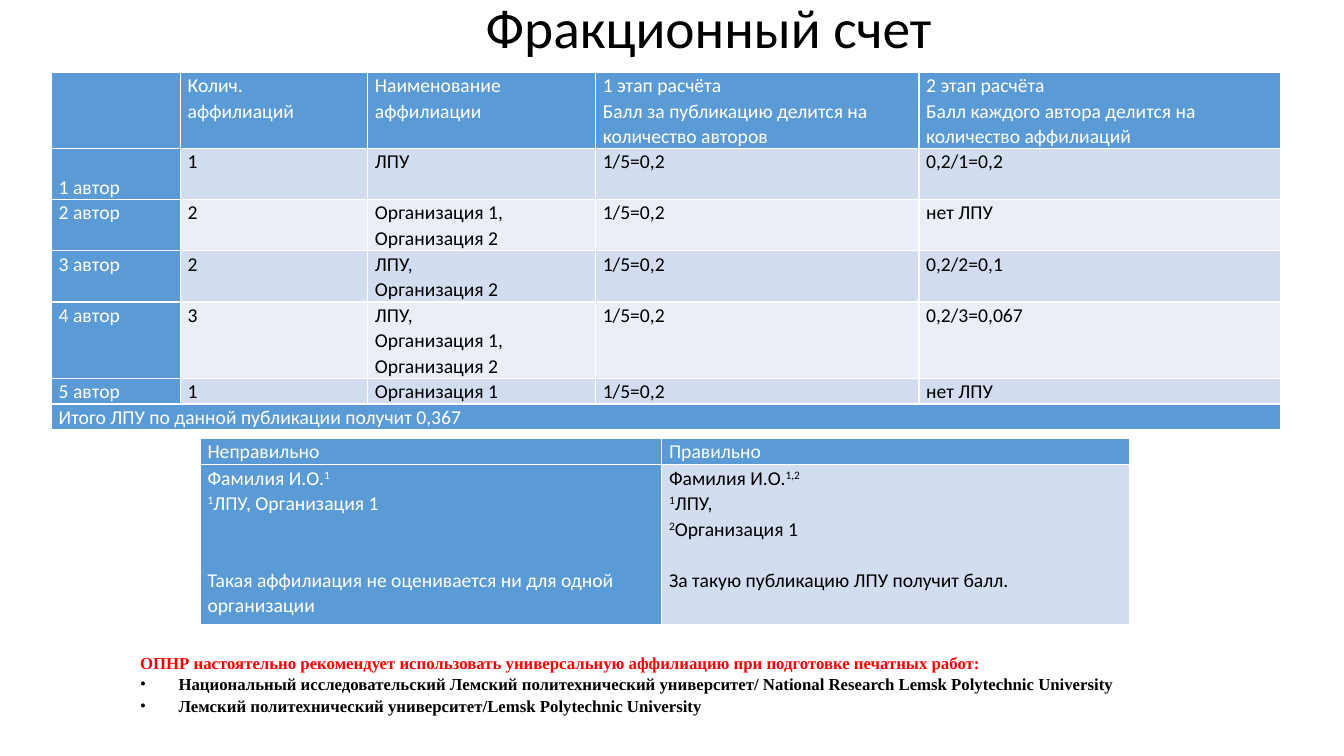
"""Build the slide on fractional counting of affiliations."""
from lxml import etree
from pptx import Presentation
from pptx.dml.color import RGBColor
from pptx.enum.text import MSO_ANCHOR, PP_ALIGN
from pptx.oxml.ns import qn
from pptx.util import Cm, Pt

MIDDLE, BOTTOM, CENTER = MSO_ANCHOR.MIDDLE, MSO_ANCHOR.BOTTOM, PP_ALIGN.CENTER
COLORS = {"blue": "5B9BD5", "light": "D2DEEF", "pale": "EAEFF7",
          "white": "FFFFFF", "black": "000000", "red": "FF0000"}
LINE_SPACING = 1.07


def style_paragraph(paragraph, font_name, size, color, bold=False):
    font = paragraph.font
    font.name, font.size, font.bold = font_name, Pt(size), bold
    font.color.rgb = RGBColor.from_string(COLORS[color])


def fill_cell(cell, lines, fill):
    """Write lines into a cell; text between carets is superscript."""
    cell.margin_left = cell.margin_right = Cm(0.18)
    cell.margin_top = cell.margin_bottom = 0
    properties = cell._tc.get_or_add_tcPr()
    for side in ("lnL", "lnR", "lnT", "lnB"):
        border = etree.SubElement(properties, qn(f"a:{side}"), w=str(Pt(1)))
        border_fill = etree.SubElement(border, qn("a:solidFill"))
        etree.SubElement(border_fill, qn("a:srgbClr"), val=COLORS["white"])
    cell.fill.solid()
    cell.fill.fore_color.rgb = RGBColor.from_string(COLORS[fill])
    frame = cell.text_frame
    for index, line in enumerate(lines):
        text, gap = line if isinstance(line, tuple) else (line, 0)
        paragraph = frame.add_paragraph() if index else frame.paragraphs[0]
        paragraph.line_spacing = LINE_SPACING
        paragraph.space_before = Pt(gap)
        style_paragraph(paragraph, "Calibri", 14, "white" if fill == "blue" else "black")
        for part_index, part in enumerate(text.split("^")):
            if part_index % 2:
                superscript = paragraph.add_run()
                superscript.text = part
                superscript._r.get_or_add_rPr().set("baseline", "30000")
            elif part:
                for break_index, piece in enumerate(part.split("\v")):
                    if break_index:
                        paragraph.add_line_break()
                    paragraph.add_run().text = piece


presentation = Presentation()
presentation.slide_width, presentation.slide_height = Cm(33.87), Cm(19.05)
slide = presentation.slides.add_slide(presentation.slide_layouts[6])

title = slide.shapes.add_textbox(Cm(6.43), 0, Cm(22.86), Cm(1.55)).text_frame
title.word_wrap = True
title.vertical_anchor = MIDDLE
heading = title.paragraphs[0]
heading.text = "Фракционный счет"
heading.alignment = CENTER
heading.line_spacing = 0.9
style_paragraph(heading, "Calibri", 39.6, "black")

score_rows = [
    [[], ["Колич.\vаффилиаций"], ["Наименование аффилиации"],
     ["1 этап расчёта\vБалл за публикацию делится на количество авторов"],
     ["2 этап расчёта\vБалл каждого автора делится на количество аффилиаций"]],
]
authors = [
    ("1", ["ЛПУ"], "0,2/1=0,2"),
    ("2", ["Организация 1,", "Организация 2"], "нет ЛПУ"),
    ("2", ["ЛПУ,", "Организация 2"], "0,2/2=0,1"),
    ("3", ["ЛПУ,", "Организация 1,", "Организация 2"], "0,2/3=0,067"),
    ("1", ["Организация 1"], "нет ЛПУ"),
]
for number, (count, affiliations, score) in enumerate(authors, 1):
    score_rows.append([[f"{number} автор"], [count], affiliations, ["1/5=0,2"], [score]])
score_rows.append([["Итого ЛПУ по данной публикации получит 0,367"], [], [], [], []])

example_rows = [
    [["Неправильно"], ["Правильно"]],
    [["Фамилия И.О.^1^", "^1^ЛПУ, Организация 1",
      ("Такая аффилиация не оценивается ни для одной организации", 36.5)],
     ["Фамилия И.О.^1,2^", "^1^ЛПУ,", "^2^Организация 1",
      ("За такую публикацию ЛПУ получит балл.", 18.25)]],
]

tables = []
for left, top, widths, heights, rows in [
    (1.3, 1.82, [3.25, 4.72, 5.74, 8.15, 9.12],
     [1.92, 1.29, 1.29, 1.29, 1.92, 0.65, 0.65], score_rows),
    (5.05, 11.05, [11.63, 11.79], [0.66, 4.04], example_rows),
]:
    table = slide.shapes.add_table(len(rows), len(widths), Cm(left), Cm(top),
                                   Cm(sum(widths)), Cm(sum(heights))).table
    table.first_row = table.horz_banding = False
    for column, width in zip(table.columns, widths):
        column.width = Cm(width)
    for row_index, (row, height) in enumerate(zip(rows, heights)):
        table.rows[row_index].height = Cm(height)
        band = "light" if row_index % 2 else "pale"
        for column_index, lines in enumerate(row):
            is_header = row_index == 0 or column_index == 0
            fill_cell(table.cell(row_index, column_index), lines,
                      "blue" if is_header else band)
    tables.append(table)

scores = tables[0]
scores.cell(1, 0).vertical_anchor = BOTTOM
scores.cell(6, 0).merge(scores.cell(6, 4))

advice = slide.shapes.add_textbox(Cm(3.28), Cm(16.28), Cm(27), Cm(1.9)).text_frame
advice.word_wrap = True
advice_lines = [
    "ОПНР настоятельно рекомендует использовать универсальную аффилиацию при подготовке печатных работ:",
    "Национальный исследовательский Лемский политехнический университет/ "
    "National Research Lemsk Polytechnic University",
    "Лемский политехнический университет/Lemsk Polytechnic University",
]
for index, text in enumerate(advice_lines):
    paragraph = advice.add_paragraph() if index else advice.paragraphs[0]
    paragraph.text = text
    paragraph.line_spacing = LINE_SPACING
    if index:
        indent = Cm(0.97)
        bullet_properties = paragraph._p.get_or_add_pPr()
        bullet_properties.set("marL", str(indent))
        bullet_properties.set("indent", str(-indent))
        etree.SubElement(bullet_properties, qn("a:buFont"), typeface="Times New Roman")
        etree.SubElement(bullet_properties, qn("a:buChar"), char="•")
    style_paragraph(paragraph, "Times New Roman", 12, "black" if index else "red", bold=True)

presentation.save("out.pptx")
